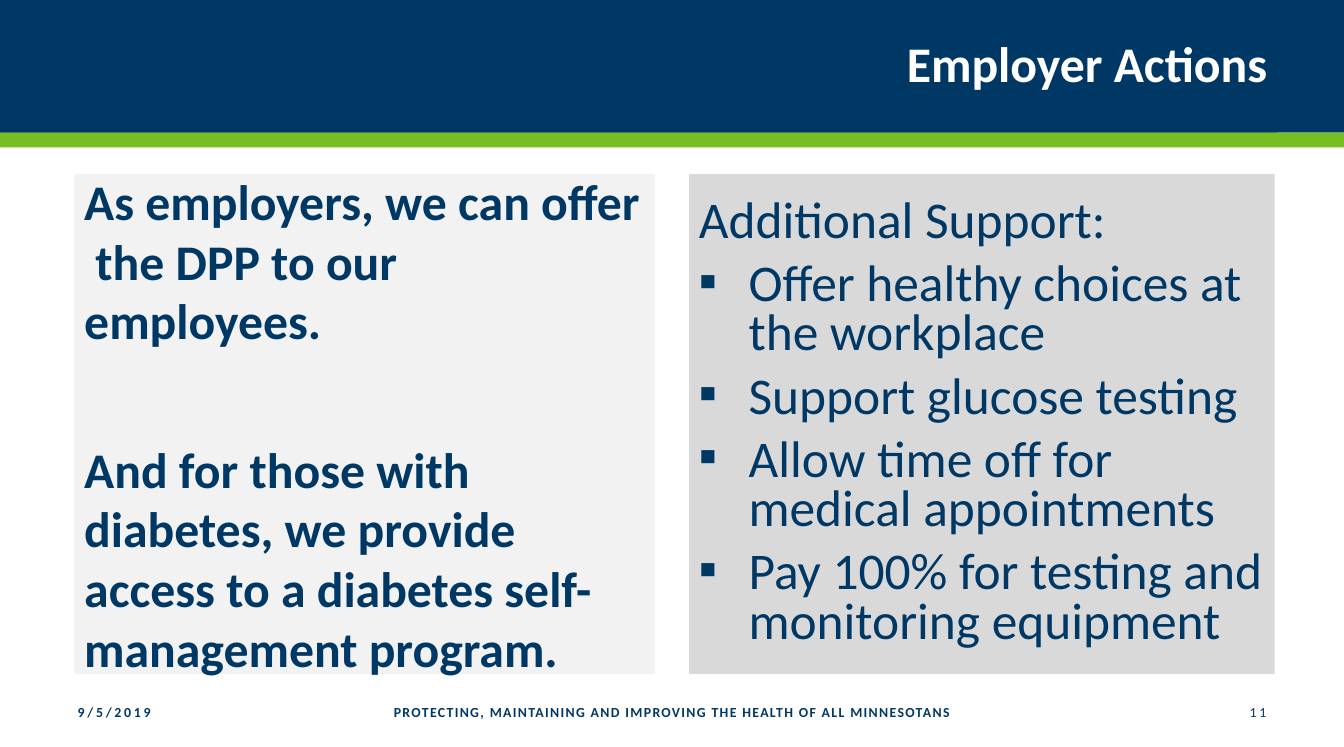
from dataclasses import dataclass

from lxml.etree import SubElement
from pptx import Presentation
from pptx.dml.color import RGBColor
from pptx.enum.shapes import MSO_SHAPE as Preset
from pptx.enum.text import MSO_ANCHOR as Anchor, PP_ALIGN as Align
from pptx.oxml.ns import qn
from pptx.util import Cm, Pt


@dataclass(frozen=True)
class Theme:
    """Colours, font and type sizes of the slide."""
    navy: str = "003865"
    green: str = "78BE21"
    white: str = "FFFFFF"
    pale: str = "F2F2F2"
    grey: str = "D9D9D9"
    font: str = "Calibri"
    heading: float = 36
    support: float = 37.2
    footer: float = 10
    gap: float = 10
    break_gap: float = 64


THEME = Theme()


def add_block(slide, box, color):
    """Add a plain filled rectangle in a box given in centimetres."""
    shape = slide.shapes.add_shape(Preset.RECTANGLE, *map(Cm, box))
    shape.shadow.inherit = False
    shape.fill.solid()
    shape.fill.fore_color.rgb = RGBColor.from_string(color)
    shape.line.fill.background()
    return shape


def open_frame(shape):
    """Make the text of a shape wrap and sit in the middle."""
    frame = shape.text_frame
    frame.word_wrap = True
    frame.vertical_anchor = Anchor.MIDDLE
    return frame


def write(frame, text, *, size, color=THEME.navy, bold=False, align=Align.LEFT,
          before=0, leading=None, tracking=0, bullet=None):
    """Write one formatted paragraph, using the empty first one if free."""
    first = frame.paragraphs[0]
    paragraph = frame.add_paragraph() if first.runs else first
    paragraph.alignment = align
    paragraph.space_before = Pt(before)
    if leading:
        paragraph.line_spacing = leading
    run = paragraph.add_run()
    run.text = text
    run.font.name = THEME.font
    run.font.size = Pt(size)
    run.font.bold = bold
    run.font.color.rgb = RGBColor.from_string(color)
    if tracking:
        run._r.get_or_add_rPr().set("spc", str(tracking * 100))
    if bullet:
        properties = paragraph._p.get_or_add_pPr()
        indent = Cm(1.27)
        properties.set("marL", str(indent))
        properties.set("indent", str(-indent))
        bullet_color = SubElement(properties, qn("a:buClr"))
        SubElement(bullet_color, qn("a:srgbClr"), val=color)
        SubElement(properties, qn("a:buFont"), typeface=THEME.font)
        SubElement(properties, qn("a:buChar"), char=bullet)


def add_header(slide, box, title):
    """Add the navy band, its green rule and the title."""
    left, top, width, height = box
    add_block(slide, (left, top + height, width, 0.38), THEME.green)
    add_block(slide, box, THEME.navy)
    title_shape = add_block(slide, (left, top, width - 1.7, height), THEME.navy)
    write(open_frame(title_shape), title, size=THEME.heading, color=THEME.white,
          bold=True, align=Align.RIGHT, leading=0.9)


def add_statements(slide, box, statements):
    """Add the pale panel of bold statements."""
    frame = open_frame(add_block(slide, box, THEME.pale))
    for index, statement in enumerate(statements):
        write(frame, statement, size=THEME.heading, bold=True,
              before=THEME.break_gap if index else THEME.gap)


def add_support(slide, box, heading, actions):
    """Add the grey panel with a heading and bulleted actions."""
    frame = open_frame(add_block(slide, box, THEME.grey))
    style = dict(size=THEME.support, before=THEME.gap, leading=0.8)
    write(frame, heading, **style)
    for action in actions:
        write(frame, action, bullet="▪", **style)


def add_footer(slide, box, date, motto, number):
    """Add the date, the motto and the slide number in one row."""
    left, top, width, height = box
    side = 3.91
    parts = (
        (date, side, dict(bold=True, tracking=2)),
        (motto, width - 2 * side, dict(bold=True, tracking=1, align=Align.CENTER)),
        (number, side, dict(tracking=2, align=Align.RIGHT)),
    )
    for text, part_width, style in parts:
        text_box = slide.shapes.add_textbox(*map(Cm, (left, top, part_width, height)))
        write(open_frame(text_box), text, size=THEME.footer, **style)
        left += part_width


def main():
    """Build the slide and save it."""
    presentation = Presentation()
    presentation.slide_width, presentation.slide_height = Cm(34.29), Cm(19.05)
    slide = presentation.slides.add_slide(presentation.slide_layouts[6])
    add_header(slide, (0, 0, 34.29, 3.38), "Employer Actions")
    add_statements(slide, (1.9, 4.44, 14.81, 12.75), (
        "As employers, we can offer  the DPP to our employees.",
        "And for those with diabetes, we provide access to a diabetes "
        "self-management program.",
    ))
    add_support(slide, (17.58, 4.44, 14.94, 12.75), "Additional Support:", (
        "Offer healthy choices at the workplace",
        "Support glucose testing",
        "Allow time off for medical appointments",
        "Pay 100% for testing and monitoring equipment",
    ))
    add_footer(slide, (1.73, 17.66, 30.83, 1.02), "9/5/2019",
               "PROTECTING, MAINTAINING AND IMPROVING THE HEALTH OF ALL MINNESOTANS",
               "11")
    presentation.save("out.pptx")


if __name__ == "__main__":
    main()
